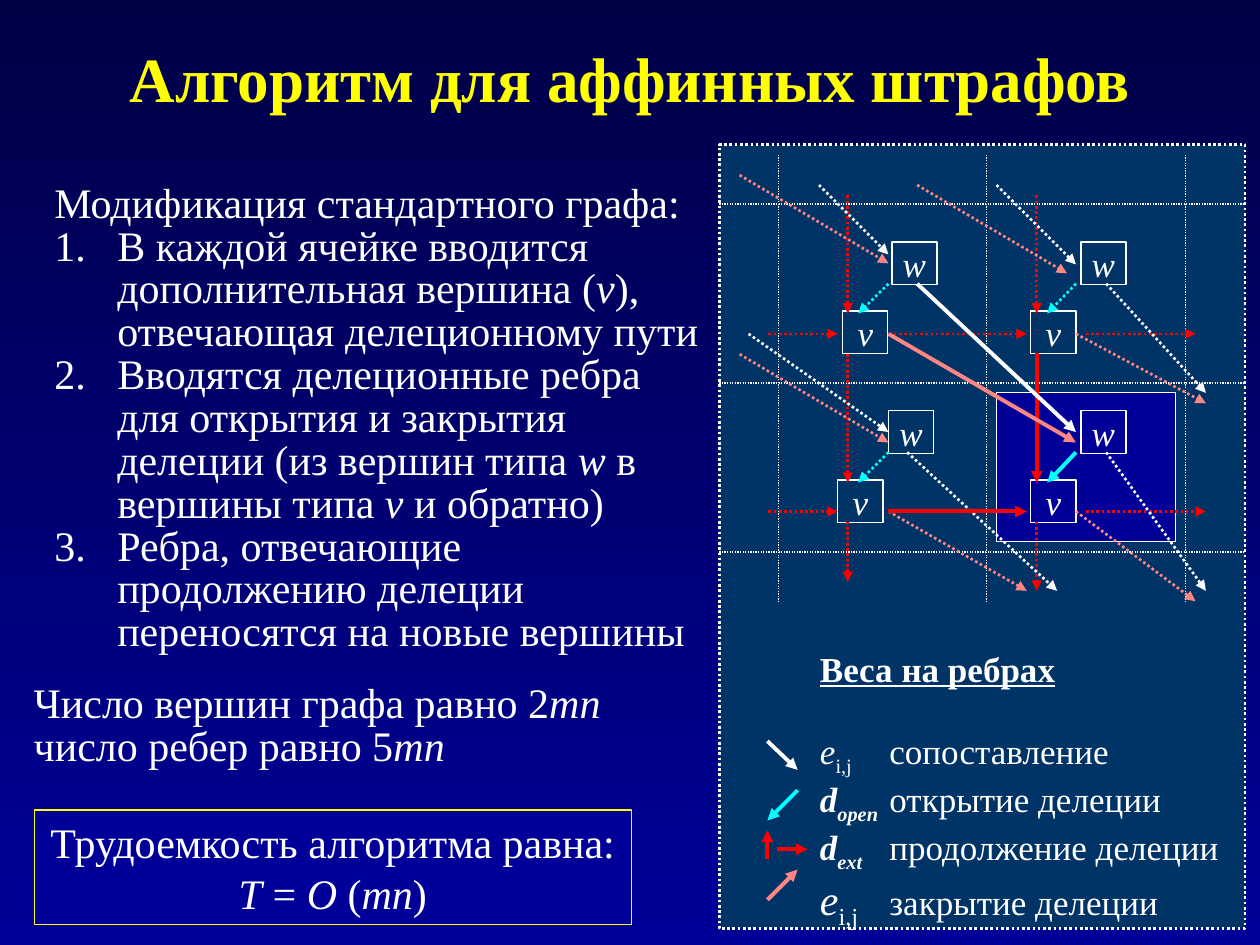
from pptx import Presentation
from pptx.dml.color import RGBColor
from pptx.enum.dml import MSO_LINE
from pptx.enum.shapes import MSO_CONNECTOR, MSO_SHAPE
from pptx.enum.text import MSO_ANCHOR, MSO_AUTO_SIZE, PP_ALIGN
from pptx.oxml.ns import qn
from pptx.util import Cm, Pt
from lxml.etree import SubElement

FONT = "Times New Roman"
WHITE, YELLOW, RED = "FFFFFF", "FFFF00", "FF0000"
CYAN, PINK, NAVY, TEAL = "00FFFF", "FF8683", "000099", "003366"

# Text: each paragraph is a list of (text, style); b, i, u, s = subscript, L = large
TITLE = "Алгоритм для аффинных штрафов"
STEPS = [
    [("Модификация стандартного графа:", "")],
    [("В каждой ячейке вводится дополнительная вершина (", ""), ("v", "i"),
     ("), отвечающая делеционному пути", "")],
    [("Вводятся делеционные ребра для открытия и закрытия делеции (из вершин типа ", ""),
     ("w", "i"), (" в вершины типа ", ""), ("v", "i"), (" и обратно)", "")],
    [("Ребра, отвечающие продолжению делеции переносятся на новые вершины", "")],
]
COUNTS = [
    [("Число вершин графа равно 2", ""), ("mn", "i")],
    [("число ребер равно 5", ""), ("mn", "i")],
]
COST = [
    [("Трудоемкость алгоритма равна:", "")],
    [("T", "i"), (" = ", ""), ("O", "i"), (" (", ""), ("mn", "i"), (")", "")],
]
WEIGHTS = [
    [("Веса на ребрах", "bu")],
    [("e", "i"), ("i,j", "s"), ("\tсопоставление", "")],
    [("d", "bi"), ("open", "bis"), ("\tоткрытие делеции", "")],
    [("d", "bi"), ("ext", "bis"), ("\tпродолжение делеции", "")],
    [("e", "iL"), ("i,j", "sL"), ("\tзакрытие делеции", "")],
]

# Graph in cm: panel, cell borders, vertices
PANEL = (14.5, 2.92, 10.6, 15.8)
COLS, ROWS = (15.7, 19.89, 23.9), (4.11, 7.72, 11.13)
TOP, BASE = 3.12, 12.12
W_ROWS, V_ROWS = (4.88, 8.28), (6.27, 9.68)
W_COLS = ((17.98, 21.79), (17.91, 21.79))
V_COLS = ((16.99, 20.78), (16.89, 20.78))

# Arrows (x1, y1, x2, y2), by colour
SOLID = {
    RED: [(20.9, 7.11, 20.9, 9.73), (17.91, 10.31, 20.7, 10.31),
          (15.67, 17.12, 16.28, 17.12), (15.47, 17.32, 15.47, 16.74)],
    WHITE: [(18.49, 5.72, 21.69, 8.71), (15.47, 14.94, 16.08, 15.52)],
    CYAN: [(21.69, 9.12, 21.11, 9.73), (16.08, 15.93, 15.47, 16.54)],
    PINK: [(17.91, 6.73, 21.69, 8.92), (15.47, 18.14, 16.08, 17.53)],
}
DOTTED = {
    RED: [(17.09, 3.94, 17.09, 6.32), (20.9, 3.94, 20.9, 6.32),
          (17.09, 7.14, 17.09, 9.73), (17.09, 10.52, 17.09, 11.73),
          (20.9, 10.52, 20.9, 11.91), (15.49, 6.73, 16.89, 6.73),
          (17.91, 6.73, 20.7, 6.73), (21.89, 6.73, 24.1, 6.73),
          (15.49, 10.31, 16.89, 10.31), (21.89, 10.31, 24.31, 10.31)],
    CYAN: [(17.91, 5.72, 17.3, 6.32), (21.69, 5.72, 21.11, 6.32),
           (17.91, 9.12, 17.3, 9.73)],
    WHITE: [(16.51, 3.73, 17.91, 5.13), (20.09, 3.73, 21.69, 5.33),
            (15.09, 6.73, 17.91, 8.71), (22.3, 5.72, 24.31, 7.92),
            (18.29, 9.12, 21.31, 11.91), (22.3, 9.12, 24.31, 11.91)],
    PINK: [(14.91, 3.53, 17.91, 5.31), (18.49, 3.73, 21.51, 5.51),
           (14.91, 7.14, 17.91, 8.92), (21.69, 6.73, 24.31, 8.13),
           (17.91, 10.31, 20.7, 11.91), (21.69, 10.31, 24.1, 12.12)],
}


def paint(target, code):
    target.rgb = RGBColor.from_string(code)


def style(run, size, code=WHITE, marks=""):
    font = run.font
    font.name, font.size = FONT, Pt(24 if "L" in marks else size)
    font.bold, font.italic, font.underline = ("b" in marks, "i" in marks, "u" in marks)
    paint(font.color, code)
    if "s" in marks:
        run._r.get_or_add_rPr().set("baseline", "-25000")


def write(frame, paras, size, align=PP_ALIGN.LEFT):
    for n, parts in enumerate(paras):
        para = frame.paragraphs[0] if n == 0 else frame.add_paragraph()
        para.alignment = align
        for text, marks in parts:
            run = para.add_run()
            run.text = text
            style(run, size, marks=marks)


def place(shape, *box):
    shape.left, shape.top, shape.width, shape.height = map(Cm, box)


def add_box(box, line, width, fill=None):
    shape = shapes.add_shape(MSO_SHAPE.RECTANGLE, *map(Cm, box))
    shape.shadow.inherit = False
    if fill:
        shape.fill.solid()
        paint(shape.fill.fore_color, fill)
    else:
        shape.fill.background()
    paint(shape.line.color, line)
    shape.line.width = Pt(width)
    return shape


def add_line(ends, code, width, dotted=False, arrow=True):
    link = shapes.add_connector(MSO_CONNECTOR.STRAIGHT, *map(Cm, ends))
    paint(link.line.color, code)
    link.line.width = Pt(width)
    if dotted:
        link.line.dash_style = MSO_LINE.ROUND_DOT
    props = link._element.spPr
    if arrow:
        SubElement(props.find(qn("a:ln")), qn("a:tailEnd"), type="triangle")
    SubElement(props, qn("a:effectLst"))


def add_text(box, paras, size):
    frame = shapes.add_textbox(*map(Cm, box)).text_frame
    frame.word_wrap = True
    write(frame, paras, size)
    return frame


deck = Presentation()
deck.slide_width, deck.slide_height = Cm(25.4), Cm(19.05)
slide = deck.slides.add_slide(deck.slide_layouts[1])
shapes = slide.shapes

# Background, dark at the top
back = slide.background.fill
back.gradient()
back.gradient_angle = 270
for stop, code, spot in zip(back.gradient_stops, ("000047", NAVY), (0, 1)):
    paint(stop.color, code)
    stop.position = spot

# Title
title = shapes.title
place(title, 1.9, 0.33, 21.6, 2.44)
title.text_frame.text = TITLE
title.text_frame.vertical_anchor = MSO_ANCHOR.MIDDLE
head = title.text_frame.paragraphs[0]
head.alignment = PP_ALIGN.CENTER
style(head.runs[0], 36, YELLOW, "b")

# Numbered steps
body = slide.placeholders[1]
place(body, 0.84, 3.58, 13.67, 9.75)
body.text_frame.auto_size = MSO_AUTO_SIZE.NONE
write(body.text_frame, STEPS, 24)
for n, para in enumerate(body.text_frame.paragraphs):
    para.line_spacing, para.space_before = 0.85, Pt(0)
    props = para._p.get_or_add_pPr()
    props.set("marL", str(Cm(1.27)))
    props.set("indent", str(-Cm(1.27)))
    if n:
        SubElement(props, qn("a:buFont"), typeface="+mj-lt")
        SubElement(props, qn("a:buAutoNum"), type="arabicPeriod")
    else:
        SubElement(props, qn("a:buNone"))

# Counts and cost
counts = add_text((0.43, 13.51, 12.07, 2.13), COUNTS, 24)
counts.paragraphs[1].line_spacing = 0.85
cost = add_box((0.69, 16.33, 12.04, 2.31), YELLOW, 0.75, NAVY).text_frame
cost.word_wrap = False
write(cost, COST, 24, PP_ALIGN.CENTER)

# Panel, cell borders and chosen cell
panel = add_box(PANEL, WHITE, 1.5, TEAL)
panel.line.dash_style = MSO_LINE.ROUND_DOT
add_box((20.09, 7.92, 3.61, 3), WHITE, 0.75, NAVY)
left, right = PANEL[0], PANEL[0] + PANEL[2]
for ends in [(x, TOP, x, BASE) for x in COLS] + [(left, y, right, y) for y in ROWS]:
    add_line(ends, WHITE, 0.75, dotted=True, arrow=False)

# Vertices
for name, cols, rows in (("w", W_COLS, W_ROWS), ("v", V_COLS, V_ROWS)):
    for xs, y in zip(cols, rows):
        for x in xs:
            frame = add_box((x, y, 0.91, 0.86), WHITE, 0.75).text_frame
            frame.word_wrap = False
            frame.vertical_anchor = MSO_ANCHOR.MIDDLE
            write(frame, [[(name, "i")]], 20, PP_ALIGN.CENTER)

# Edges and legend arrows
for group, width, dotted in ((DOTTED, 1.5, True), (SOLID, 2.25, False)):
    for code, links in group.items():
        for ends in links:
            add_line(ends, code, width, dotted)

# Legend
legend = add_text((16.28, 12.93, 8.64, 5.51), WEIGHTS, 20)
legend.paragraphs[0].space_after = Pt(23)
for para in legend.paragraphs[1:]:
    tabs = SubElement(para._p.get_or_add_pPr(), qn("a:tabLst"))
    SubElement(tabs, qn("a:tab"), pos=str(Cm(1.4)), algn="l")

deck.save("out.pptx")
